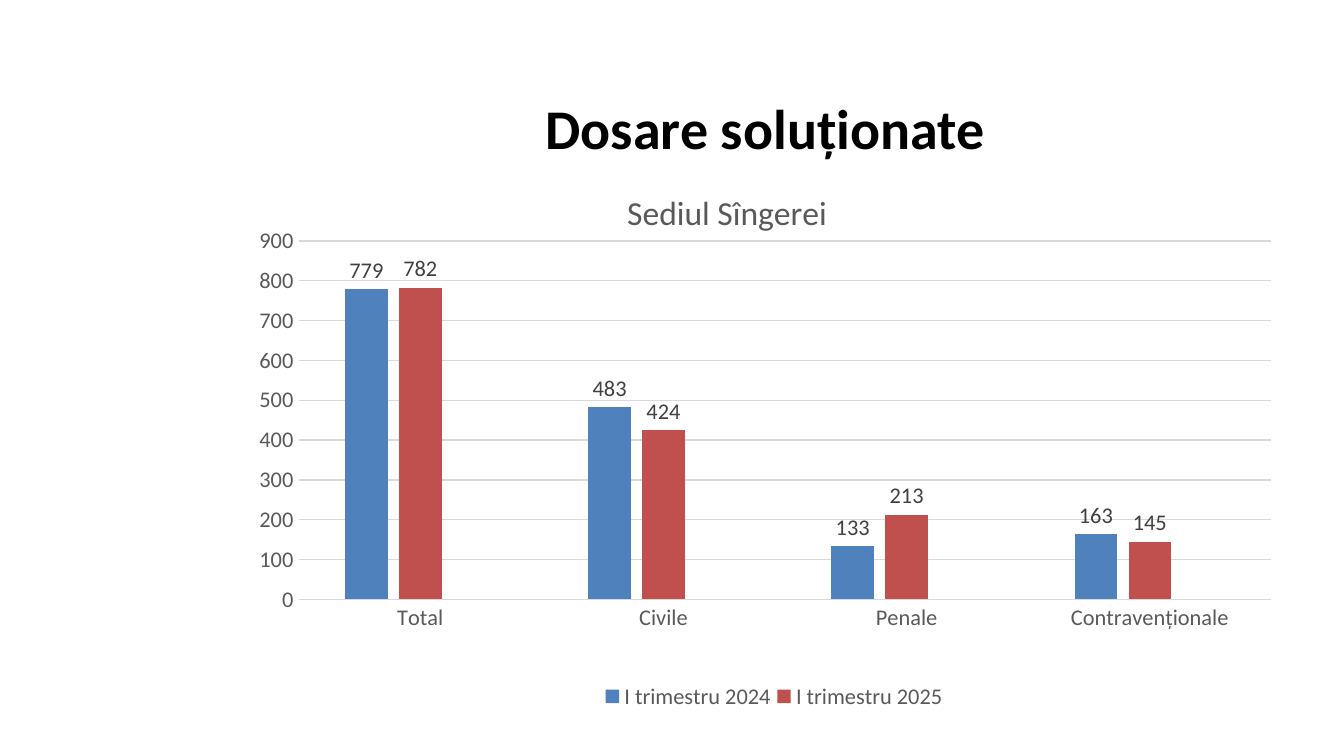
import pptx
import pptx.chart.data
import pptx.dml.color
import pptx.enum.chart
import pptx.enum.text
import pptx.oxml
import pptx.oxml.ns
import pptx.util

EMU_PER_PX = 914400 / 134.4
FONT = "Calibri"
BLACK = pptx.dml.color.RGBColor(0x00, 0x00, 0x00)
DARK_GREY = pptx.dml.color.RGBColor(0x40, 0x40, 0x40)
GREY = pptx.dml.color.RGBColor(0x59, 0x59, 0x59)
LIGHT_GREY = pptx.dml.color.RGBColor(0xD9, 0xD9, 0xD9)
BLUE = pptx.dml.color.RGBColor(0x4F, 0x81, 0xBD)
RED = pptx.dml.color.RGBColor(0xC0, 0x50, 0x4D)
GREEN = pptx.dml.color.RGBColor(0x9B, 0xBB, 0x59)

CATEGORIES = ["Total", "Civile", "Penale", "Contravenționale"]
LABEL_POSITION = pptx.enum.chart.XL_LABEL_POSITION
# Name, values, colour, label position; the empty series keeps its slot
SERIES = [
    ("I trimestru 2024", (779, 483, 133, 163), BLUE, LABEL_POSITION.OUTSIDE_END),
    ("I trimestru 2025", (782, 424, 213, 145), RED, LABEL_POSITION.OUTSIDE_END),
    ("Series 3", (None,) * 4, GREEN, LABEL_POSITION.INSIDE_END),
]


def px(value):
    return pptx.util.Emu(round(value * EMU_PER_PX))


def style_font(font, size, color, bold=False):
    font.name = FONT
    font.size = pptx.util.Pt(size)
    font.color.rgb = color
    font.bold = bold


def style_line(line):
    line.color.rgb = LIGHT_GREY
    line.width = pptx.util.Pt(0.75)


def chart_element(markup):
    return pptx.oxml.parse_xml(
        f'<c:root {pptx.oxml.ns.nsdecls("c")}>{markup}</c:root>')[0]


def set_layout(parent, index, inner=False, **fractions):
    """Place a chart part by fractions of the chart area."""
    for layout in parent.findall(pptx.oxml.ns.qn("c:layout")):
        parent.remove(layout)
    target = '<c:layoutTarget val="inner"/>' if inner else ""
    modes = "".join(f'<c:{key}Mode val="edge"/>' for key in "xy")
    values = "".join(f'<c:{key} val="{value}"/>' for key, value in fractions.items())
    parent.insert(index, chart_element(
        f"<c:layout><c:manualLayout>{target}{modes}{values}</c:manualLayout></c:layout>"))


def add_title(slide):
    box = slide.shapes.add_textbox(px(267), px(97), px(1009), px(60))
    frame = box.text_frame
    frame.word_wrap = True
    frame.vertical_anchor = pptx.enum.text.MSO_ANCHOR.MIDDLE
    frame.text = "Dosare soluționate "
    paragraph = frame.paragraphs[0]
    paragraph.alignment = pptx.enum.text.PP_ALIGN.CENTER
    style_font(paragraph.runs[0].font, 30, BLACK, bold=True)


def style_axes(chart):
    for axis in (chart.category_axis, chart.value_axis):
        axis.major_tick_mark = pptx.enum.chart.XL_TICK_MARK.NONE
        axis.minor_tick_mark = pptx.enum.chart.XL_TICK_MARK.NONE
        style_font(axis.tick_labels.font, 12, GREY)
    style_line(chart.category_axis.format.line)
    value_axis = chart.value_axis
    value_axis.minimum_scale = 0
    value_axis.maximum_scale = 900
    value_axis.major_unit = 100
    value_axis.format.line.fill.background()
    style_line(value_axis.major_gridlines.format.line)


def style_series(plot):
    plot.gap_width = 219
    plot.overlap = -27
    plot.vary_by_categories = False
    for series, (_, _, color, position) in zip(plot.series, SERIES):
        series.format.fill.solid()
        series.format.fill.fore_color.rgb = color
        labels = series.data_labels
        labels.show_value = True
        labels.position = position
        style_font(labels.font, 12, DARK_GREY)


def add_chart_title(chart):
    chart.has_title = True
    title = chart.chart_title
    title.text_frame.text = "Sediul Sîngerei"
    style_font(title.text_frame.paragraphs[0].runs[0].font, 18, GREY)
    title.include_in_layout = False
    set_layout(title._element, 1, x=0.4, y=0.05)


def add_legend(chart):
    chart.has_legend = True
    legend = chart.legend
    legend.position = pptx.enum.chart.XL_LEGEND_POSITION.BOTTOM
    legend.include_in_layout = False
    style_font(legend.font, 12, GREY)
    # The empty series has no legend entry
    legend._element.insert(1, chart_element(
        '<c:legendEntry><c:idx val="2"/><c:delete val="1"/></c:legendEntry>'))
    set_layout(legend._element, 2, x=0.38, y=0.91, w=0.32, h=0.07)


def add_case_chart(slide):
    data = pptx.chart.data.CategoryChartData(number_format="General")
    data.categories = CATEGORIES
    for name, values, _, _ in SERIES:
        data.add_series(name, values)
    chart = slide.shapes.add_chart(
        pptx.enum.chart.XL_CHART_TYPE.COLUMN_CLUSTERED,
        px(184), px(155), px(1093), px(573), data).chart
    style_font(chart.font, 10, BLACK)
    style_axes(chart)
    style_series(chart.plots[0])
    add_chart_title(chart)
    add_legend(chart)
    plot_area = chart._chartSpace.chart.plotArea
    set_layout(plot_area, 0, inner=True, x=0.105, y=0.15, w=0.89, h=0.626)


def main():
    presentation = pptx.Presentation()
    presentation.slide_width = px(1344)
    presentation.slide_height = px(756)
    slide = presentation.slides.add_slide(presentation.slide_layouts[6])
    add_title(slide)
    add_case_chart(slide)
    presentation.save("out.pptx")


if __name__ == "__main__":
    main()
